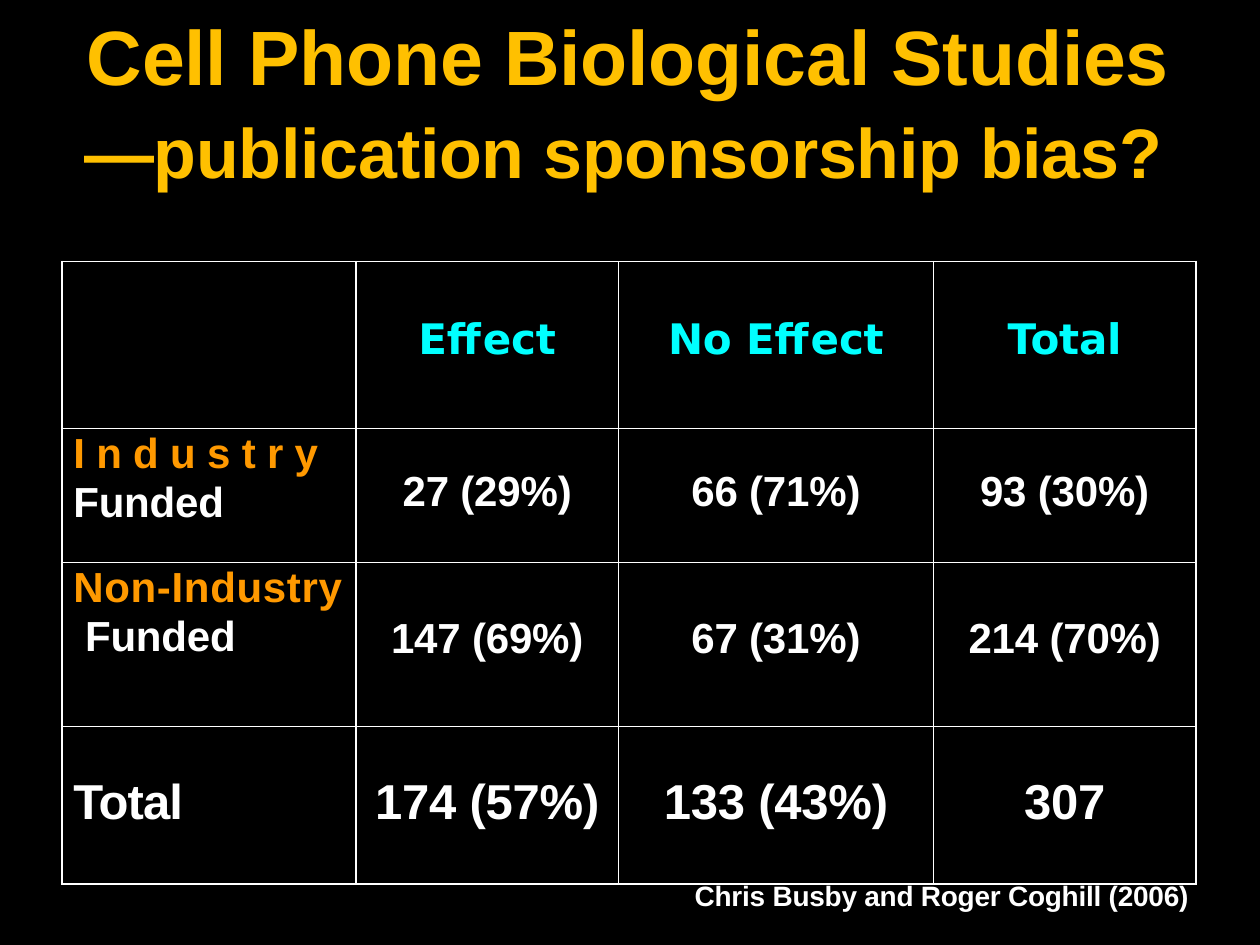
from lxml.etree import SubElement
from pptx import Presentation
from pptx.dml.color import RGBColor
from pptx.enum.text import MSO_ANCHOR, MSO_AUTO_SIZE, PP_ALIGN as Align
from pptx.oxml.ns import qn
from pptx.util import Pt

# Content: a run is (text, colour, letter spacing in points)
BLACK, WHITE, GOLD, ORANGE, CYAN = "000000", "FFFFFF", "FFC000", "FF9900", "00FFFF"
TITLE = [  # left indent, size, runs
    (29.5, 44, [("Cell Phone Biological Studies", GOLD, -0.1)]),
    (28, 40, [("—", GOLD, -0.1), ("publication sponsorship bias?", GOLD, -0.1)]),
]
CREDIT = ("Chris Busby and Roger Coghill (2006)", WHITE, -0.1)
LABELS = [
    [],
    [("I n d u s t r y ", ORANGE, -0.1), ("Funded", WHITE, -0.1)],
    [("Non-Industry ", ORANGE, 0.4), ("Funded", WHITE, -0.1)],
    [("Total", WHITE, -0.5)],
]
VALUES = [
    ["Effect", "No Effect", "Total"],
    ["27 (29%)", "66 (71%)", "93 (30%)"],
    ["147 (69%)", "67 (31%)", "214 (70%)"],
    ["174 (57%)", "133 (43%)", "307"],
]
# Row height, space above values, font, size, value colour
ROWS = [
    (95.5, 31, "DejaVu Sans", 24, CYAN),
    (76.5, 22.5, "Arial", 24, WHITE),
    (93.75, 30.5, "Arial", 24, WHITE),
    (90, 27.5, "Arial", 28, WHITE),
]
COLUMNS = [168, 150, 180, 150]
LABEL_INDENT = 6.5
WRAP_INDENTS = {2: 6.7}  # row: extra indent of the wrapped line


def colour(value):
    return RGBColor.from_string(value)


def add_runs(para, runs, size, font="Arial"):
    for text, ink, spacing in runs:
        span = para.add_run()
        span.text = text
        span.font.name, span.font.size, span.font.bold = font, Pt(size), True
        span.font.color.rgb = colour(ink)
        span.font._element.set("spc", str(round(spacing * 100)))


def indent(para, left, first=0):
    props = para._p.get_or_add_pPr()
    props.set("marL", str(Pt(left)))
    props.set("indent", str(Pt(first)))


def clear_margins(target):
    target.margin_left = target.margin_right = 0
    target.margin_top = target.margin_bottom = 0


def style_cell(cell):
    clear_margins(cell)
    props = cell._tc.get_or_add_tcPr()
    for side in ("lnL", "lnR", "lnT", "lnB"):
        line = SubElement(props, qn(f"a:{side}"), w=str(Pt(1)))
        fill = SubElement(line, qn("a:solidFill"))
        SubElement(fill, qn("a:srgbClr"), val=WHITE)
    cell.fill.solid()
    cell.fill.fore_color.rgb = colour(BLACK)


# Slide and background
deck = Presentation()
deck.slide_width, deck.slide_height = Pt(720), Pt(540)
page = deck.slides.add_slide(deck.slide_layouts[5])
page.background.fill.solid()
page.background.fill.fore_color.rgb = colour(BLACK)

# Title
title = page.shapes.title
title.left, title.top, title.width, title.height = Pt(20), Pt(5), Pt(680), Pt(195)
frame = title.text_frame
clear_margins(frame)
frame.word_wrap = True
frame.auto_size = MSO_AUTO_SIZE.NONE
frame.vertical_anchor = MSO_ANCHOR.TOP
for number, (left, size, runs) in enumerate(TITLE):
    para = frame.add_paragraph() if number else frame.paragraphs[0]
    para.alignment = Align.LEFT
    para.line_spacing = Pt(52.4)
    para.space_before = Pt(0)
    indent(para, left)
    add_runs(para, runs, size)

# Table
table = page.shapes.add_table(
    len(ROWS), len(COLUMNS), Pt(35.4), Pt(149.5),
    Pt(sum(COLUMNS)), Pt(sum(row[0] for row in ROWS))).table
table.first_row = table.horz_banding = False
for column, width in zip(table.columns, COLUMNS):
    column.width = Pt(width)
for r, (height, above, font, size, ink) in enumerate(ROWS):
    table.rows[r].height = Pt(height)
    label = table.cell(r, 0)
    style_cell(label)
    para = label.text_frame.paragraphs[0]
    hang = WRAP_INDENTS.get(r, 0)
    indent(para, LABEL_INDENT + hang, -hang)
    add_runs(para, LABELS[r], size)
    if len(LABELS[r]) > 1:
        para.line_spacing = Pt(28)
    else:
        label.margin_top = Pt(above)
    for c, text in enumerate(VALUES[r], start=1):
        cell = table.cell(r, c)
        style_cell(cell)
        cell.margin_top = Pt(above)
        para = cell.text_frame.paragraphs[0]
        para.alignment = Align.CENTER
        add_runs(para, [(text, ink, -0.1)], size, font)

# Credit
box = page.shapes.add_textbox(Pt(396), Pt(501.8), Pt(289.5), Pt(20))
clear_margins(box.text_frame)
box.text_frame.word_wrap = True
para = box.text_frame.paragraphs[0]
indent(para, 1)
add_runs(para, [CREDIT], 16)

deck.save("out.pptx")
